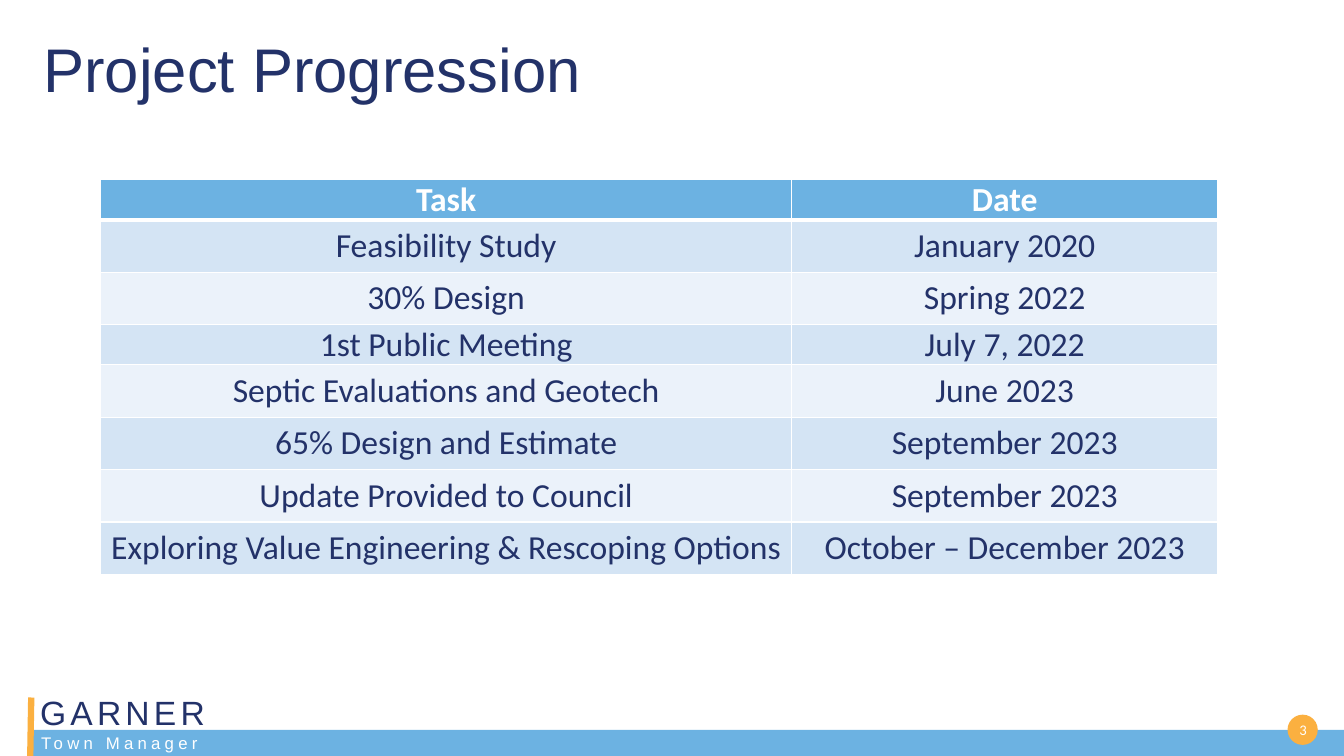
from lxml import etree
from pptx import Presentation
from pptx.dml.color import RGBColor
from pptx.enum.shapes import MSO_CONNECTOR, MSO_SHAPE
from pptx.enum.text import MSO_ANCHOR, PP_ALIGN
from pptx.oxml.ns import qn
from pptx.util import Inches, Pt

CENTER, LEFT = PP_ALIGN.CENTER, PP_ALIGN.LEFT
TOP, MIDDLE, BOTTOM = MSO_ANCHOR.TOP, MSO_ANCHOR.MIDDLE, MSO_ANCHOR.BOTTOM
RECT, OVAL = MSO_SHAPE.RECTANGLE, MSO_SHAPE.OVAL
STRAIGHT = MSO_CONNECTOR.STRAIGHT

NAVY, SKY, AMBER, WHITE = "233269", "6CB2E2", "FBB040", "FFFFFF"
BANDS = ("D4E4F4", "EBF2FA")

TASKS = [
    ("Task", "Date"),
    ("Feasibility Study", "January 2020"),
    ("30% Design", "Spring 2022"),
    ("1st Public Meeting", "July 7, 2022"),
    ("Septic Evaluations and Geotech", "June 2023"),
    ("65% Design and Estimate", "September 2023"),
    ("Update Provided to Council", "September 2023"),
    ("Exploring Value Engineering & Rescoping Options", "October – December 2023"),
]
SHORT_ROWS = (0, 3)


def rgb(color):
    return RGBColor.from_string(color)


def format_paragraph(p, size, color, font, align=LEFT, bold=False):
    p.alignment = align
    p.font.size = Pt(size)
    p.font.name = font
    p.font.bold = bold
    p.font.color.rgb = rgb(color)


def add_label(s, text, box, size, color, font, align=LEFT, anchor=TOP, spacing=0):
    """Add a one-line text box; spacing is the letter spacing in points."""
    tf = s.shapes.add_textbox(*map(Inches, box)).text_frame
    tf.word_wrap = True
    tf.vertical_anchor = anchor
    p = tf.paragraphs[0]
    r = p.add_run()
    r.text = text
    format_paragraph(p, size, color, font, align)
    if spacing:
        r.font._element.set("spc", str(spacing * 100))


def add_plain_shape(s, kind, box, color):
    sp = s.shapes.add_shape(kind, *map(Inches, box))
    sp.shadow.inherit = False
    sp.fill.solid()
    sp.fill.fore_color.rgb = rgb(color)
    sp.line.fill.background()


def add_footer(s, left, top, width, height):
    bar_top = top + 0.32
    add_plain_shape(s, RECT, (left, bar_top, width, height - 0.32), SKY)
    stripe = s.shapes.add_connector(
        STRAIGHT, Inches(left - 0.02), Inches(top), Inches(left - 0.03), Inches(top + height))
    stripe.line.color.rgb = rgb(AMBER)
    stripe.line.width = Pt(4.5)
    etree.SubElement(stripe._element.spPr, qn("a:effectLst"))
    add_label(s, "GARNER", (left - 0.03, top - 0.1, 2.54, 0.5), 24, NAVY, "Arial", spacing=3)
    add_label(s, "Town Manager", (left - 0.02, bar_top - 0.02, 4.91, 0.3), 12, WHITE, "Arial",
              spacing=3)


def add_page_number(s, number, left, top, size):
    add_plain_shape(s, OVAL, (left, top, size, size), AMBER)
    add_label(s, number, (left - 0.07, top - 0.05, size + 0.15, size + 0.1), 10.5, WHITE,
              "Calibri", CENTER, MIDDLE)


def add_title(s, text, box):
    title = s.shapes.title
    title.left, title.top, title.width, title.height = map(Inches, box)
    tf = title.text_frame
    tf.text = text
    tf.vertical_anchor = MIDDLE
    p = tf.paragraphs[0]
    p.line_spacing = 0.9
    format_paragraph(p, 44, NAVY, "Arial")


def set_borders(cell, top, bottom):
    """Draw white borders; top and bottom are widths in points."""
    tcPr = cell._tc.get_or_add_tcPr()
    for side, width in (("L", 1), ("R", 1), ("T", top), ("B", bottom)):
        ln = etree.SubElement(tcPr, qn(f"a:ln{side}"), w=str(Pt(width)))
        fill = etree.SubElement(ln, qn("a:solidFill"))
        etree.SubElement(fill, qn("a:srgbClr"), val=WHITE)


def add_schedule(s, left, top, col_widths, row_height, short_height):
    heights = [short_height if i in SHORT_ROWS else row_height for i in range(len(TASKS))]
    table = s.shapes.add_table(
        len(TASKS), len(col_widths), Inches(left), Inches(top),
        Inches(sum(col_widths)), Inches(sum(heights))).table
    for column, width in zip(table.columns, col_widths):
        column.width = Inches(width)
    for i, (texts, height) in enumerate(zip(TASKS, heights)):
        header = i == 0
        table.rows[i].height = Inches(height)
        for j, text in enumerate(texts):
            cell = table.cell(i, j)
            cell.margin_left = cell.margin_right = cell.margin_top = cell.margin_bottom = 0
            cell.vertical_anchor = BOTTOM if header else MIDDLE
            set_borders(cell, 3 if i == 1 else 1, 3 if header else 1)
            cell.fill.solid()
            cell.fill.fore_color.rgb = rgb(SKY if header else BANDS[(i - 1) % 2])
            cell.text = text
            format_paragraph(cell.text_frame.paragraphs[0], 24, WHITE if header else NAVY,
                             "Calibri", CENTER, header)


def main():
    prs = Presentation()
    prs.slide_width, prs.slide_height = Inches(13.33), Inches(7.5)
    s = prs.slides.add_slide(prs.slide_layouts[5])
    add_footer(s, 0.33, 6.92, 13, 0.58)
    add_page_number(s, "3", 12.77, 7.09, 0.3)
    add_title(s, "Project Progression", (0.33, 0.32, 11.5, 0.8))
    add_schedule(s, 1, 1.78, (6.85, 4.23), 0.52, 0.4)
    prs.save("out.pptx")


if __name__ == "__main__":
    main()
